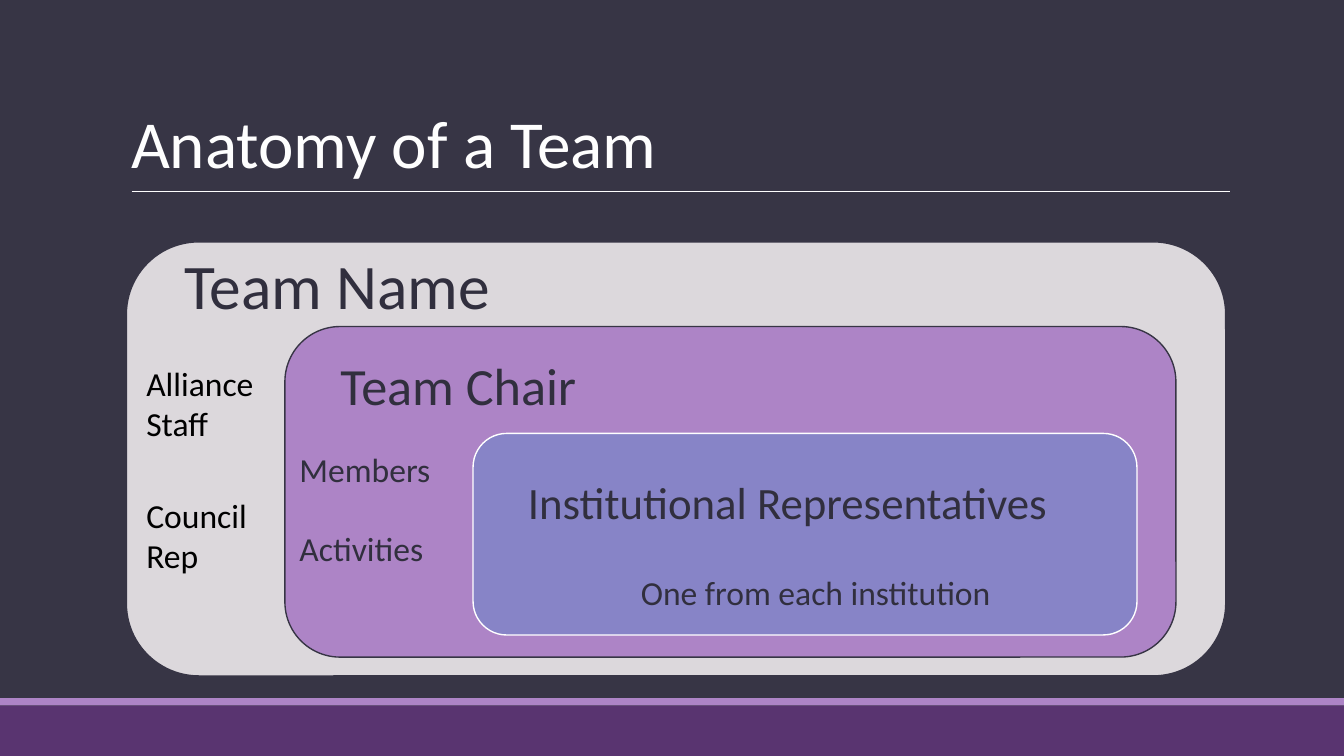
"""Build the "Anatomy of a Team" slide with nested team roles."""
from lxml.etree import SubElement
from pptx import Presentation
from pptx.dml.color import RGBColor
from pptx.enum.shapes import MSO_CONNECTOR as Connector, MSO_SHAPE as Shape
from pptx.enum.text import MSO_ANCHOR as Anchor, MSO_AUTO_SIZE as AutoSize, PP_ALIGN as Align
from pptx.oxml.ns import qn
from pptx.util import Pt

PX = 4572
FONT = "Calibri"
NIGHT = RGBColor(0x37, 0x35, 0x45)
INK = RGBColor(0x31, 0x2F, 0x3E)
BLACK = RGBColor(0x00, 0x00, 0x00)
WHITE = RGBColor(0xFF, 0xFF, 0xFF)
OFF_WHITE = RGBColor(0xFE, 0xFE, 0xFE)
PLUM = RGBColor(0x59, 0x34, 0x70)
LILAC = RGBColor(0xAD, 0x84, 0xC6)
PERIWINKLE = RGBColor(0x87, 0x84, 0xC7)
MIST = RGBColor(0xDC, 0xD8, 0xDC)


def px(*lengths):
    return [length * PX for length in lengths]


def write(frame, words, size, color, inset):
    frame.word_wrap = True
    frame.auto_size = AutoSize.NONE
    frame.margin_left = frame.margin_right = inset * PX
    frame.margin_top = frame.margin_bottom = inset * PX
    frame.text = words
    paragraph = frame.paragraphs[0]
    paragraph.alignment = Align.LEFT
    font = paragraph.runs[0].font
    font.name, font.size, font.color.rgb = FONT, Pt(size), color


def add_title(slide, words):
    title = slide.shapes.title
    title.left, title.top, title.width, title.height = px(180, 48, 1650, 238)
    write(title.text_frame, words, 36, OFF_WHITE, 15)
    title.text_frame.vertical_anchor = Anchor.BOTTOM
    title.text_frame.paragraphs[0].line_spacing = 0.85


def add_rule(slide, left, right, y):
    rule = slide.shapes.add_connector(Connector.STRAIGHT, *px(left, y, right, y))
    rule.line.color.rgb = OFF_WHITE
    rule.line.width = Pt(0.75)
    SubElement(rule._element.spPr, qn("a:effectLst"))


def add_panel(slide, kind, box, fill, outline=None):
    panel = slide.shapes.add_shape(kind, *px(*box))
    panel.shadow.inherit = False
    panel.fill.solid()
    panel.fill.fore_color.rgb = fill
    if outline is None:
        panel.line.fill.background()
    else:
        panel.line.color.rgb = outline
        panel.line.width = Pt(0.75)
    return panel


def add_level(slide, box, fill, outline):
    add_panel(slide, Shape.ROUNDED_RECTANGLE, box, fill, outline).adjustments[0] = 0.167


def add_label(slide, words, box, size=18, color=INK):
    label = slide.shapes.add_textbox(*px(*box))
    write(label.text_frame, words, size, color, 20)


def main():
    deck = Presentation()
    deck.slide_width, deck.slide_height = px(2000, 1125)
    slide = deck.slides.add_slide(deck.slide_layouts[5])
    slide.background.fill.solid()
    slide.background.fill.fore_color.rgb = NIGHT

    add_panel(slide, Shape.RECTANGLE, (0, 1050, 2000, 75), PLUM)
    add_panel(slide, Shape.RECTANGLE, (0, 1039, 2000, 11), LILAC)
    add_rule(slide, 196, 1830, 285)
    add_title(slide, "Anatomy of a Team")

    add_level(slide, (188, 360, 1636, 646), MIST, NIGHT)
    add_label(slide, "Team Name", (255, 346, 542, 92), 34)
    for row, role in enumerate(("Alliance Staff", "Council Rep")):
        add_label(slide, role, (198, 520 + 196 * row, 210, 140), color=BLACK)

    add_level(slide, (424, 486, 1326, 492), LILAC, NIGHT)
    add_label(slide, "Team Chair", (487, 506, 1092, 92), 28)
    for row, part in enumerate(("Members", "Activities")):
        add_label(slide, part, (426, 648 + 118 * row, 244, 126))

    add_level(slide, (704, 645, 988, 300), PERIWINKLE, WHITE)
    add_label(slide, "Institutional Representatives", (766, 686, 864, 126), 24)
    add_label(slide, "One from each institution", (934, 831, 592, 92))

    deck.save("out.pptx")


if __name__ == "__main__":
    main()
